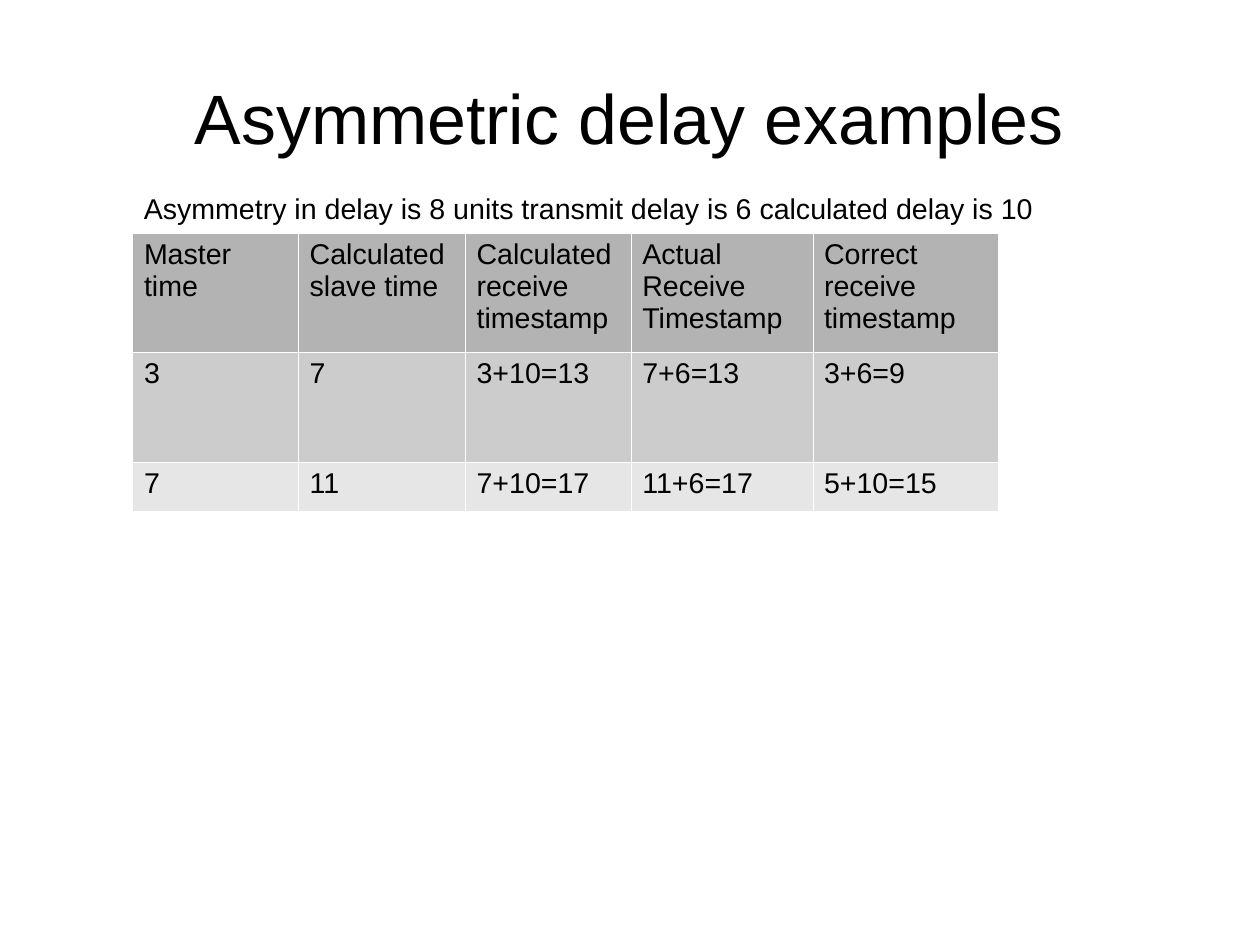
from lxml.etree import SubElement
from pptx import Presentation
from pptx.dml.color import RGBColor
from pptx.enum.text import MSO_ANCHOR, PP_ALIGN
from pptx.oxml.ns import qn
from pptx.util import Inches, Pt

FONT = "Arial"
CENTIMETRES_PER_INCH = 2.54
COLORS = {"text": "000000", "border": "FFFFFF", "background": "FFFFFF",
          "header": "B3B3B3", "odd": "CCCCCC", "even": "E6E6E6"}
ROW_FILLS = ["header", "odd", "even"]
COLUMN_WIDTHS = [1.45, 1.46, 1.45, 1.59, 1.62]
ROW_HEIGHTS = [1.04, 0.96, 0.43]
DELAY_ROWS = [
    ["Master time", "Calculated slave time", "Calculated receive timestamp",
     "Actual Receive\nTimestamp", "Correct receive timestamp"],
    ["3", "7", "3+10=13", "7+6=13", "3+6=9"],
    ["7", "11", "7+10=17", "11+6=17", "5+10=15"],
]


def write_text(text_frame, text, size, alignment=PP_ALIGN.LEFT):
    text_frame.word_wrap = True
    for index, line in enumerate(text.split("\n")):
        paragraph = text_frame.add_paragraph() if index else text_frame.paragraphs[0]
        paragraph.alignment = alignment
        run = paragraph.add_run()
        run.text = line
        run.font.name = FONT
        run.font.size = Pt(size)
        run.font.color.rgb = RGBColor.from_string(COLORS["text"])


def set_margins(holder, horizontal, vertical):
    holder.margin_left = holder.margin_right = Inches(horizontal)
    holder.margin_top = holder.margin_bottom = Inches(vertical)


def set_fill(holder, color):
    holder.fill.solid()
    holder.fill.fore_color.rgb = RGBColor.from_string(COLORS[color])


def add_text(slide, text, box, size, margins, alignment=PP_ALIGN.LEFT, anchor=MSO_ANCHOR.TOP):
    shape = slide.shapes.add_textbox(*map(Inches, box))
    text_frame = shape.text_frame
    set_margins(text_frame, *margins)
    text_frame.vertical_anchor = anchor
    write_text(text_frame, text, size, alignment)


def set_borders(cell):
    properties = cell._tc.get_or_add_tcPr()
    for position, side in enumerate(("a:lnL", "a:lnR", "a:lnT", "a:lnB")):
        line = SubElement(properties, qn(side), w=str(Pt(0.06)))
        properties.insert(position, line)
        fill = SubElement(line, qn("a:solidFill"))
        SubElement(fill, qn("a:srgbClr"), val=COLORS["border"])


def add_delay_table(slide, left, top):
    frame = slide.shapes.add_table(
        len(ROW_HEIGHTS), len(COLUMN_WIDTHS), Inches(left), Inches(top),
        Inches(sum(COLUMN_WIDTHS)), Inches(sum(ROW_HEIGHTS)))
    table = frame.table
    for column, width in zip(table.columns, COLUMN_WIDTHS):
        column.width = Inches(width)
    for row, height, fill, texts in zip(table.rows, ROW_HEIGHTS, ROW_FILLS, DELAY_ROWS):
        row.height = Inches(height)
        for cell, text in zip(row.cells, texts):
            set_margins(cell, 0.1, 0.05)
            set_fill(cell, fill)
            set_borders(cell)
            write_text(cell.text_frame, text, 18)


def main():
    presentation = Presentation()
    presentation.slide_width = Inches(28 / CENTIMETRES_PER_INCH)
    presentation.slide_height = Inches(21 / CENTIMETRES_PER_INCH)
    slide = presentation.slides.add_slide(presentation.slide_layouts[6])
    set_fill(slide.background, "background")
    add_text(slide, "Asymmetric delay examples", (0.55, 0.33, 9.92, 1.38), 44, (0, 0),
             PP_ALIGN.CENTER, MSO_ANCHOR.MIDDLE)
    add_delay_table(slide, 1.16, 2.04)
    add_text(slide, "Asymmetry in delay is 8 units transmit delay is 6 calculated delay is 10",
             (1.16, 1.62, 8.03, 0.38), 18, (0.1, 0.05))
    presentation.save("out.pptx")


if __name__ == "__main__":
    main()
